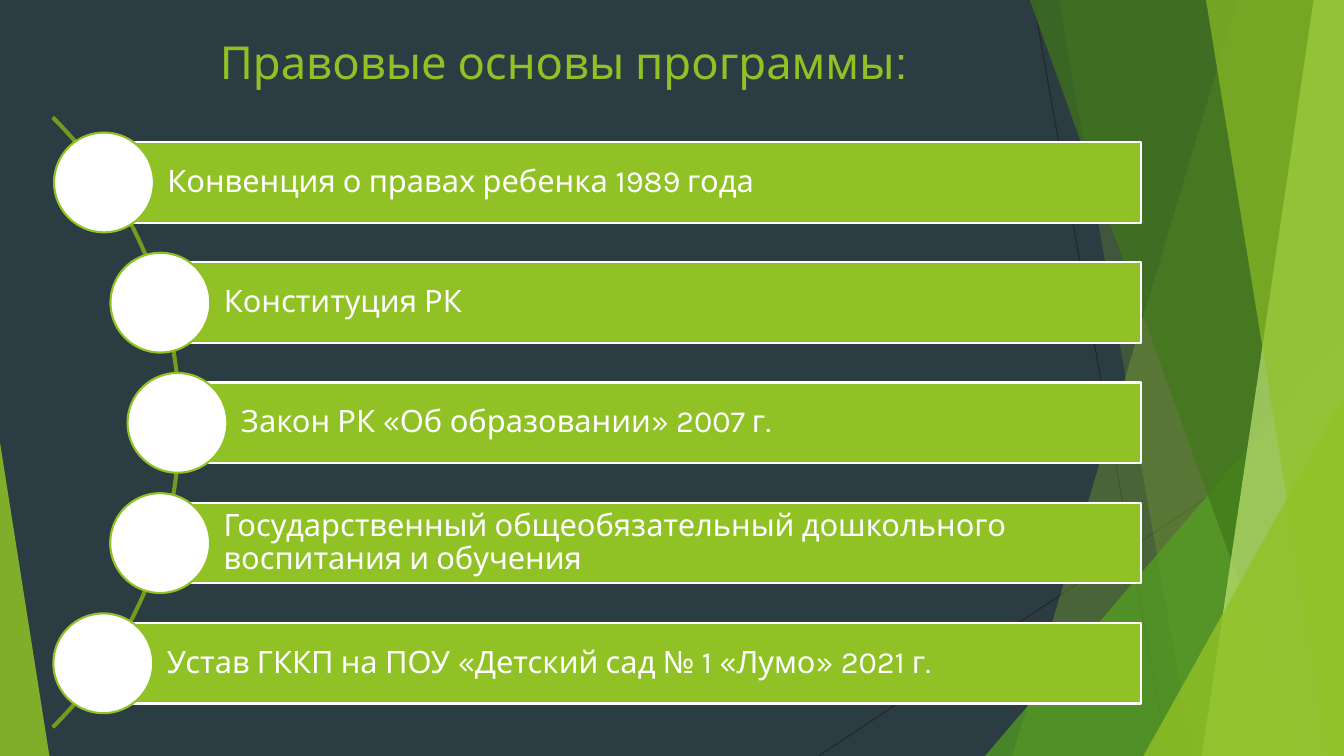
import math

import pptx
import pptx.dml.color
import pptx.enum.shapes
import pptx.enum.text
import pptx.oxml
import pptx.oxml.ns
import pptx.util

RGBColor = pptx.dml.color.RGBColor
AutoShape = pptx.enum.shapes.MSO_SHAPE
Anchor = pptx.enum.text.MSO_ANCHOR
Align = pptx.enum.text.PP_ALIGN

# Content
TITLE_RUNS = [("Правовые основы программы", "Karla"), (":", "Arial")]
LEGAL_BASES = [
    "Конвенция о правах ребенка 1989 года",
    "Конституция РК",
    "Закон РК «Об образовании» 2007 г.",
    "Государственный общеобязательный дошкольного воспитания и обучения",
    "Устав ГККП на ПОУ «Детский сад № 1 «Лумо» 2021 г.",
]

# Colours
BACKGROUND = RGBColor(0x2C, 0x3C, 0x43)
LIME = RGBColor(0x90, 0xC2, 0x26)
OLIVE = RGBColor(0x73, 0x9B, 0x1E)
GREEN = RGBColor(0x54, 0xA0, 0x21)
FOREST = RGBColor(0x3F, 0x78, 0x19)
PALE_LIME = RGBColor(0xC0, 0xE4, 0x74)
CHARCOAL = RGBColor(0x26, 0x26, 0x26)
WHITE = RGBColor(0xFF, 0xFF, 0xFF)

# Lengths in px, 100 to the inch
EMU_PER_PX = 9144
WIDTH, HEIGHT = 1333, 750
TITLE_BOX = (89, 29, 940, 72)
ARC_CENTER_X, ARC_CENTER_Y, ARC_RADIUS = -249, 419, 428
ARC_THICKNESS = 2
BULLET_RADIUS = 425
BAR_RIGHT, BAR_HEIGHT, BAR_TOP, LAST_BAR_TOP = 1132, 80, 141, 618
CIRCLE_SIZE = 99

# Background decoration: thin lines, then facets from back to front
THIN_LINES = [(1025, 0, 1158, 750), (1333, 403, 812, 750)]
# Bands run to the right edge: top left x, bottom left x, colour, opacity in %
# Triangles: box, apex position, colour, opacity in %
FACETS = [
    ("band", (1228, 1004), LIME, 30),
    ("band", (1050, 1183), LIME, 20),
    ("triangle", (977, 333, 356, 417, 1), GREEN, 72),
    ("band", (1021, 1291), FOREST, 70),
    ("band", (1303, 1192), PALE_LIME, 70),
    ("band", (1196, 1318), LIME, 65),
    ("triangle", (1134, 393, 199, 357, 1), LIME, 80),
    ("triangle", (0, 439, 49, 311, 0), LIME, 85),
]

BAR_TEXT_FORMAT = {
    "word_wrap": True,
    "vertical_anchor": Anchor.MIDDLE,
    "margin_left": 63 * EMU_PER_PX,
    "margin_top": 6 * EMU_PER_PX,
    "margin_right": 6 * EMU_PER_PX,
    "margin_bottom": 6 * EMU_PER_PX,
}
TITLE_TEXT_FORMAT = {
    "word_wrap": True,
    "auto_size": pptx.enum.text.MSO_AUTO_SIZE.NONE,
    "vertical_anchor": Anchor.TOP,
    "margin_top": 5 * EMU_PER_PX,
    "margin_bottom": 0,
}
BAR_PARAGRAPH_FORMAT = {"alignment": Align.LEFT, "line_spacing": 0.9}


def emu(*lengths):
    return [round(length * EMU_PER_PX) for length in lengths]


def apply_format(target, values):
    for name, value in values.items():
        setattr(target, name, value)


def style_shape(shape, fill=None, line=None, opacity=100):
    shape.shadow.inherit = False
    if fill is None:
        shape.fill.background()
    else:
        shape.fill.solid()
        shape.fill.fore_color.rgb = fill
    if opacity < 100:
        color = shape.fill._xPr.find(".//" + pptx.oxml.ns.qn("a:srgbClr"))
        color.append(pptx.oxml.parse_xml(
            f'<a:alpha {pptx.oxml.ns.nsdecls("a")} val="{opacity * 1000}"/>'))
    if line is None:
        shape.line.fill.background()
    else:
        shape.line.color.rgb = line
        shape.line.width = pptx.util.Pt(1.5)


def add_run(paragraph, text, font, size, color):
    run = paragraph.add_run()
    run.text = text
    apply_format(run.font, {"name": font, "size": pptx.util.Pt(size)})
    run.font.color.rgb = color


def add_decoration(slide):
    for ends in THIN_LINES:
        line = slide.shapes.add_connector(
            pptx.enum.shapes.MSO_CONNECTOR.STRAIGHT, *emu(*ends))
        line.line.color.rgb = CHARCOAL
        line.line.width = pptx.util.Pt(0.75)
        line._element.spPr.append(pptx.oxml.parse_xml(
            f'<a:effectLst {pptx.oxml.ns.nsdecls("a")}/>'))
    for kind, geometry, color, opacity in FACETS:
        if kind == "band":
            top_x, bottom_x = geometry
            builder = slide.shapes.build_freeform(top_x, -1, scale=EMU_PER_PX)
            builder.add_line_segments(
                [(WIDTH, -1), (WIDTH, HEIGHT), (bottom_x, HEIGHT)], close=True)
            facet = builder.convert_to_shape()
        else:
            *box, apex = geometry
            facet = slide.shapes.add_shape(
                AutoShape.ISOSCELES_TRIANGLE, *emu(*box))
            facet.adjustments[0] = apex
        style_shape(facet, fill=color, opacity=opacity)


def add_title(slide):
    title = slide.shapes.title
    title.left, title.top, title.width, title.height = emu(*TITLE_BOX)
    apply_format(title.text_frame, TITLE_TEXT_FORMAT)
    paragraph = title.text_frame.paragraphs[0]
    paragraph.alignment = Align.CENTER
    for text, font in TITLE_RUNS:
        add_run(paragraph, text, font, 32.4, LIME)


def add_legal_list(slide):
    # Arc behind the circles, from 315 to 45 degrees
    arc = slide.shapes.add_shape(AutoShape.BLOCK_ARC, *emu(
        ARC_CENTER_X - ARC_RADIUS, ARC_CENTER_Y - ARC_RADIUS,
        2 * ARC_RADIUS, 2 * ARC_RADIUS))
    thickness_ratio = ARC_THICKNESS / (2 * ARC_RADIUS)
    for index, value in enumerate((189, 27, thickness_ratio)):
        arc.adjustments[index] = value
    style_shape(arc, line=OLIVE)

    # Each bar starts at its circle's centre, which lies on the arc
    pitch = (LAST_BAR_TOP - BAR_TOP) / (len(LEGAL_BASES) - 1)
    for index, text in enumerate(LEGAL_BASES):
        top = BAR_TOP + index * pitch
        center_y = top + BAR_HEIGHT / 2
        left = ARC_CENTER_X + math.sqrt(
            BULLET_RADIUS ** 2 - (center_y - ARC_CENTER_Y) ** 2)
        bar = slide.shapes.add_shape(AutoShape.RECTANGLE, *emu(
            left, top, BAR_RIGHT - left, BAR_HEIGHT))
        style_shape(bar, fill=LIME, line=WHITE)
        apply_format(bar.text_frame, BAR_TEXT_FORMAT)
        paragraph = bar.text_frame.paragraphs[0]
        apply_format(paragraph, BAR_PARAGRAPH_FORMAT)
        add_run(paragraph, text, "Karla", 22, WHITE)

        circle = slide.shapes.add_shape(AutoShape.OVAL, *emu(
            left - CIRCLE_SIZE / 2, center_y - CIRCLE_SIZE / 2,
            CIRCLE_SIZE, CIRCLE_SIZE))
        style_shape(circle, fill=WHITE, line=LIME)


def main():
    presentation = pptx.Presentation()
    presentation.slide_width, presentation.slide_height = emu(WIDTH, HEIGHT)
    slide = presentation.slides.add_slide(presentation.slide_layouts[5])
    slide.background.fill.solid()
    slide.background.fill.fore_color.rgb = BACKGROUND
    add_decoration(slide)
    add_title(slide)
    add_legal_list(slide)
    presentation.save("out.pptx")


if __name__ == "__main__":
    main()
